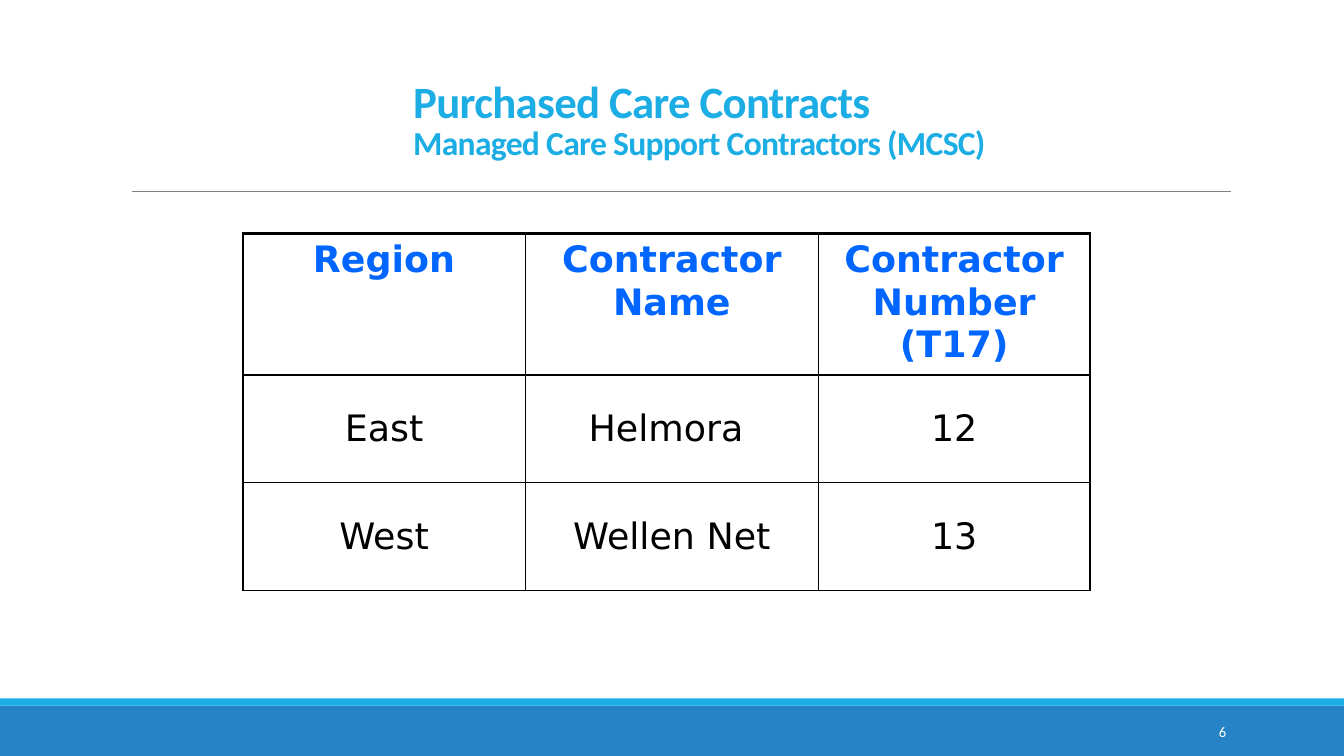
import dataclasses

import pptx
import pptx.dml.color
import pptx.enum.shapes
import pptx.enum.text
import pptx.oxml.ns
import pptx.util
from lxml import etree

Inches = pptx.util.Inches
Pt = pptx.util.Pt
Align = pptx.enum.text.PP_ALIGN
Anchor = pptx.enum.text.MSO_ANCHOR
qn = pptx.oxml.ns.qn


@dataclasses.dataclass(frozen=True)
class Theme:
    cyan: str = "1CADE4"
    blue: str = "2683C6"
    heading: str = "0066FF"
    black: str = "000000"
    white: str = "FFFFFF"
    gray: str = "808080"
    title_font: str = "Calibri"
    table_font: str = "DejaVu Sans"
    title_size: float = 32
    subtitle_size: float = 24
    table_size: float = 26
    number_size: float = 10.5
    thin: float = 1
    thick: float = 2.25


THEME = Theme()
COLUMN_WIDTHS = [2.8, 2.91, 2.69]
ROW_HEIGHTS = [1.4, 1.07, 1.07]
CONTRACTS = [
    ["Region", "Contractor Name", "Contractor Number (T17)"],
    ["East", "Helmora ", "12"],
    ["West", "Wellen Net", "13"],
]


def rgb(color):
    return pptx.dml.color.RGBColor.from_string(color)


def write(paragraph, text, *, font, size, color, bold=False, align=Align.LEFT, spacing=None):
    paragraph.alignment = align
    run = paragraph.add_run()
    run.text = text
    run.font.name = font
    run.font.size = Pt(size)
    run.font.bold = bold
    run.font.color.rgb = rgb(color)
    if spacing is not None:
        run.font._element.set("spc", str(round(spacing * 100)))


def add_frame(slide, left, top, width, height, anchor):
    frame = slide.shapes.add_textbox(
        Inches(left), Inches(top), Inches(width), Inches(height)).text_frame
    frame.word_wrap = True
    frame.vertical_anchor = anchor
    return frame


def add_band(slide, top, height, color):
    band = slide.shapes.add_shape(
        pptx.enum.shapes.MSO_SHAPE.RECTANGLE,
        Inches(0), Inches(top), Inches(13.33), Inches(height))
    band.shadow.inherit = False
    band.fill.solid()
    band.fill.fore_color.rgb = rgb(color)
    band.line.fill.background()


def add_rule(slide, left, right, y):
    rule = slide.shapes.add_connector(
        pptx.enum.shapes.MSO_CONNECTOR.STRAIGHT,
        Inches(left), Inches(y), Inches(right), Inches(y))
    rule.line.color.rgb = rgb(THEME.gray)
    rule.line.width = Pt(0.5)
    etree.SubElement(rule._element.spPr, qn("a:effectLst"))


def set_borders(cell, widths):
    properties = cell._tc.get_or_add_tcPr()
    for side, width in widths.items():
        border = etree.SubElement(properties, qn(f"a:ln{side}"), w=str(Pt(width)))
        fill = etree.SubElement(border, qn("a:solidFill"))
        etree.SubElement(fill, qn("a:srgbClr"), val=THEME.black)


def add_contract_table(slide, left, top):
    table = slide.shapes.add_table(
        len(CONTRACTS), len(COLUMN_WIDTHS), Inches(left), Inches(top),
        Inches(sum(COLUMN_WIDTHS)), Inches(sum(ROW_HEIGHTS))).table
    for column, width in zip(table.columns, COLUMN_WIDTHS):
        column.width = Inches(width)
    last_column = len(COLUMN_WIDTHS) - 1
    for r, (values, height) in enumerate(zip(CONTRACTS, ROW_HEIGHTS)):
        table.rows[r].height = Inches(height)
        header = r == 0
        for c, value in enumerate(values):
            cell = table.cell(r, c)
            set_borders(cell, {
                "L": THEME.thick if c == 0 else THEME.thin,
                "R": THEME.thick if c == last_column else THEME.thin,
                "T": THEME.thick if header else THEME.thin,
                "B": THEME.thin,
            })
            cell.fill.solid()
            cell.fill.fore_color.rgb = rgb(THEME.white)
            cell.vertical_anchor = Anchor.TOP if header else Anchor.MIDDLE
            write(cell.text_frame.paragraphs[0], value,
                  font=THEME.table_font, size=THEME.table_size, bold=header,
                  color=THEME.heading if header else THEME.black, align=Align.CENTER)


def add_title(slide):
    heading = add_frame(slide, 4, 0.33, 9.33, 1.33, Anchor.BOTTOM).paragraphs[0]
    heading.line_spacing = 0.85
    style = dict(font=THEME.title_font, color=THEME.cyan, bold=True, spacing=-0.5)
    write(heading, "Purchased Care Contracts", size=THEME.title_size, **style)
    heading.add_line_break()
    write(heading, "Managed Care Support Contractors (MCSC)", size=THEME.subtitle_size, **style)


def add_slide_number(slide):
    number = add_frame(slide, 10.83, 7.06, 1.43, 0.4, Anchor.MIDDLE).paragraphs[0]
    write(number, "6", font=THEME.title_font, size=THEME.number_size,
          color=THEME.white, align=Align.RIGHT)


def main():
    deck = pptx.Presentation()
    deck.slide_width = Inches(13.33)
    deck.slide_height = Inches(7.5)
    slide = deck.slides.add_slide(deck.slide_layouts[6])
    add_band(slide, 7, 0.5, THEME.blue)
    add_band(slide, 6.93, 0.07, THEME.cyan)
    add_rule(slide, 1.31, 12.21, 1.9)
    add_contract_table(slide, 2.41, 2.32)
    add_slide_number(slide)
    add_title(slide)
    deck.save("out.pptx")


if __name__ == "__main__":
    main()
